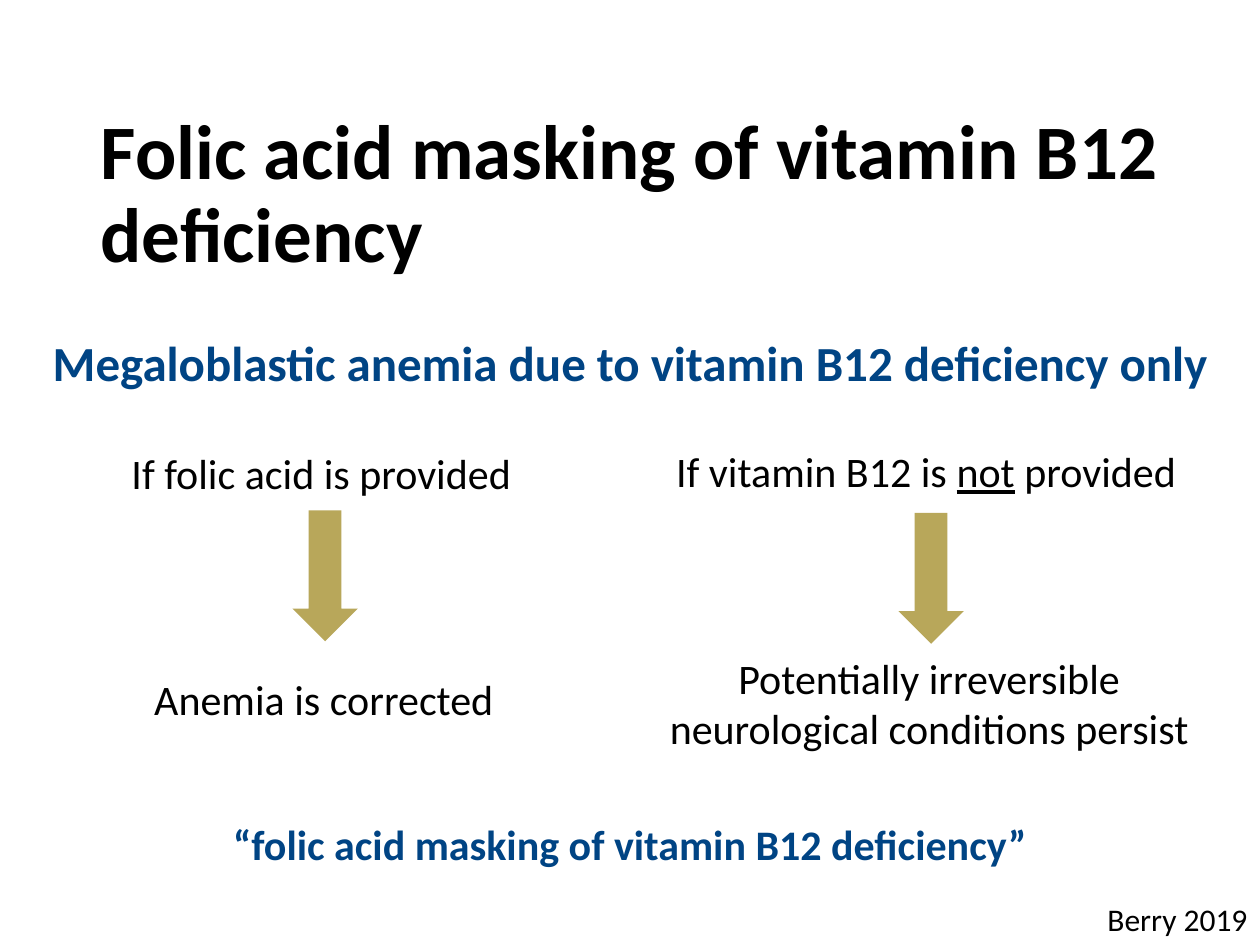
from dataclasses import dataclass

from pptx import Presentation
from pptx.dml.color import RGBColor
from pptx.enum.shapes import MSO_SHAPE
from pptx.enum.text import MSO_ANCHOR, PP_ALIGN
from pptx.util import Inches, Pt

DOWN_ARROW = MSO_SHAPE.DOWN_ARROW
TOP, MIDDLE = MSO_ANCHOR.TOP, MSO_ANCHOR.MIDDLE
LEFT, CENTER, RIGHT = PP_ALIGN.LEFT, PP_ALIGN.CENTER, PP_ALIGN.RIGHT


@dataclass(frozen=True)
class Theme:
    font: str = "Calibri"
    black: RGBColor = RGBColor(0x00, 0x00, 0x00)
    blue: RGBColor = RGBColor(0x00, 0x44, 0x84)
    gold: RGBColor = RGBColor(0xB8, 0xA7, 0x5A)
    title: Pt = Pt(44)
    heading: Pt = Pt(28)
    body: Pt = Pt(24)
    citation: Pt = Pt(18)


class SlideBuilder:
    def __init__(self, slide, theme):
        self.slide = slide
        self.theme = theme

    def text(self, box, runs, align=CENTER, anchor=TOP, line_spacing=None, **formats):
        """Add a one-paragraph box; runs are (text, extra format) pairs."""
        shape = self.slide.shapes.add_textbox(*map(Inches, box))
        frame = shape.text_frame
        frame.word_wrap = True
        frame.vertical_anchor = anchor
        paragraph = frame.paragraphs[0]
        paragraph.alignment = align
        if line_spacing:
            paragraph.line_spacing = line_spacing
        color = formats.pop("color", self.theme.black)
        base = {"name": self.theme.font, "size": self.theme.body, **formats}
        for content, extra in runs:
            run = paragraph.add_run()
            run.text = content
            run.font.color.rgb = color
            for name, value in {**base, **extra}.items():
                setattr(run.font, name, value)

    def arrow(self, left, top, width=0.52, height=1.04):
        shape = self.slide.shapes.add_shape(
            DOWN_ARROW, *map(Inches, (left, top, width, height)))
        shape.shadow.inherit = False
        shape.fill.solid()
        shape.fill.fore_color.rgb = self.theme.gold
        shape.line.fill.background()


def main():
    presentation = Presentation()
    presentation.slide_width = Inches(10)
    presentation.slide_height = Inches(7.5)
    slide = presentation.slides.add_slide(presentation.slide_layouts[6])
    theme = Theme()
    builder = SlideBuilder(slide, theme)

    # Title and heading
    builder.text((0.7, 0.83, 8.62, 1.45),
                 [("Folic acid masking of vitamin B12 deficiency", {})],
                 align=LEFT, anchor=MIDDLE, line_spacing=0.9,
                 size=theme.title, bold=True)
    builder.text((0, 2.59, 10, 0.57),
                 [("Megaloblastic anemia due to vitamin B12 deficiency only", {})],
                 size=theme.heading, bold=True, color=theme.blue)

    # Two columns: condition, arrow, outcome
    columns = [
        ((0.49, 3.5, 4.12, 0.5), [("If folic acid is provided", {})],
         (2.32, 4.05),
         (1.11, 5.3, 2.92, 0.5), "Anemia is corrected"),
        ((5.18, 3.49, 4.34, 0.5),
         [("If vitamin B12 is ", {}), ("not", {"underline": True}), (" provided", {})],
         (7.13, 4.07),
         (5.21, 5.13, 4.33, 0.91),
         "Potentially irreversible neurological conditions persist"),
    ]
    for condition_box, condition, arrow_place, outcome_box, outcome in columns:
        builder.text(condition_box, condition)
        builder.arrow(*arrow_place)
        builder.text(outcome_box, [(outcome, {})])

    # Conclusion and citation
    builder.text((0, 6.45, 10, 0.5),
                 [("“folic acid masking of vitamin B12 deficiency”", {})],
                 bold=True, color=theme.blue)
    builder.text((7.48, 7.09, 2.52, 0.4), [("Berry 2019", {})],
                 align=RIGHT, size=theme.citation)

    presentation.save("out.pptx")


if __name__ == "__main__":
    main()
